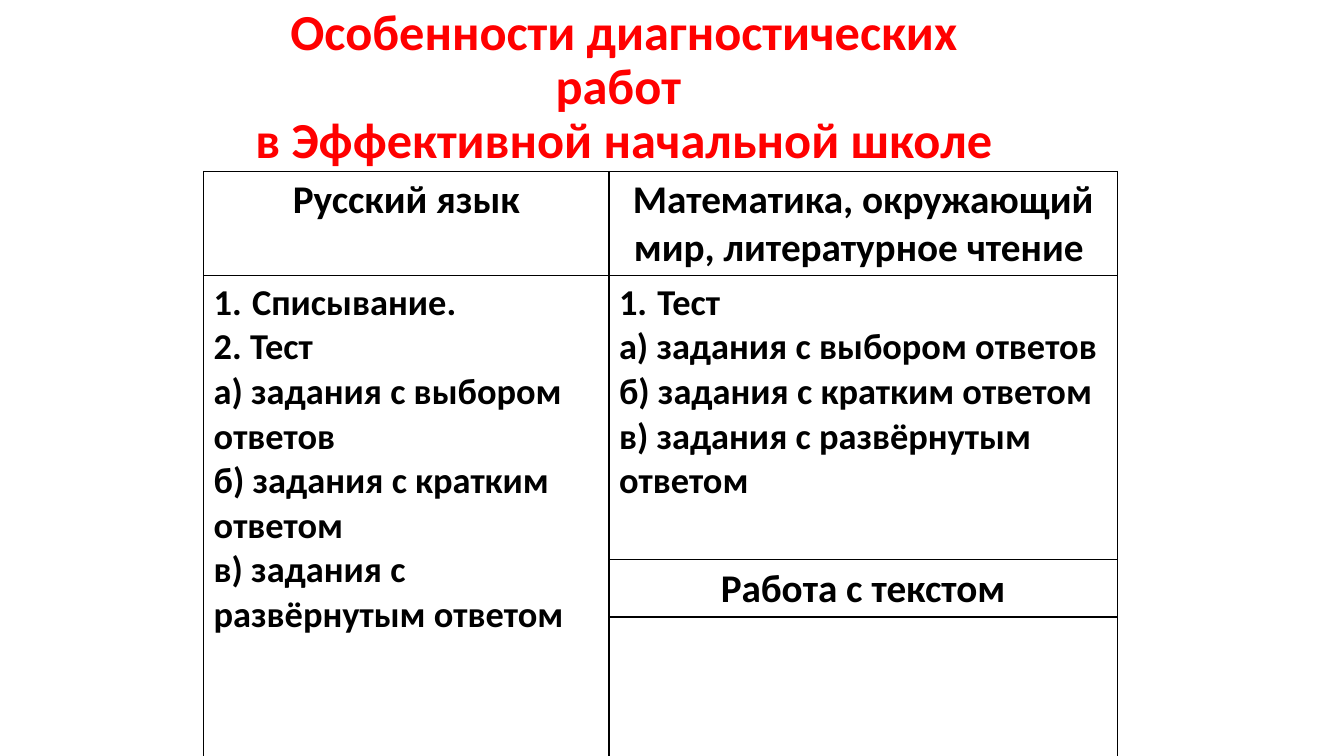
from dataclasses import dataclass

import pptx
import pptx.dml.color
import pptx.enum.text
import pptx.oxml
import pptx.oxml.ns
import pptx.presentation
import pptx.slide
import pptx.table
import pptx.text.text
import pptx.util

Align = pptx.enum.text.PP_ALIGN
NS = pptx.oxml.ns.nsdecls("a")


@dataclass(frozen=True)
class Theme:
    font: str = "Calibri"
    red: str = "FF0000"
    black: str = "000000"
    title: int = 36
    head: int = 28
    body: int = 26
    rule: float = 1


@dataclass(frozen=True)
class Entry:
    row: int
    col: int
    lines: tuple[str, ...]
    head: bool = False


THEME = Theme()
WIDTH, HEIGHT = pptx.util.Inches(13.33), pptx.util.Inches(7.5)

# Shares of the slide's width and height, in percent
TITLE_BOX = (17.18, 2, 58.51, 19.33)
TABLE_AT = (15.15, 22.67)
COLS = (30.16, 37.81)
ROWS = (6.8, 37.6, 6.8, 20.27)
INDENT = 2.85

TITLE = "Особенности диагностических работ \vв Эффективной начальной школе"
TASKS = (
    "а) задания с выбором ответов",
    "б) задания с кратким ответом",
    "в) задания с развёрнутым ответом",
)
ENTRIES = (
    Entry(0, 0, ("Русский язык",), head=True),
    Entry(0, 1, ("Математика, окружающий мир, литературное чтение ",), head=True),
    Entry(1, 0, ("Списывание.", "2. Тест", *TASKS)),
    Entry(1, 1, ("Тест", *TASKS)),
    Entry(2, 1, ("Работа с текстом",), head=True),
)


def across(share: float) -> int:
    return round(WIDTH * share / 100)


def down(share: float) -> int:
    return round(HEIGHT * share / 100)


def style(frame: pptx.text.text.TextFrame, size: int, color: str, align: Align) -> None:
    for para in frame.paragraphs:
        para.alignment = align
        for run in para.runs:
            run.font.name = THEME.font
            run.font.size = pptx.util.Pt(size)
            run.font.bold = True
            run.font.color.rgb = pptx.dml.color.RGBColor.from_string(color)


def number(para: pptx.text.text._Paragraph) -> None:
    """Give the paragraph an automatic number and a hanging indent."""
    props = para._p.get_or_add_pPr()
    props.set("marL", str(across(INDENT)))
    props.set("indent", str(-across(INDENT)))
    props.append(pptx.oxml.parse_xml(f'<a:buAutoNum {NS} type="arabicPeriod"/>'))


def frame_cell(cell: pptx.table._Cell) -> None:
    """Rule all four sides of the cell and clear its fill."""
    props = cell._tc.get_or_add_tcPr()
    for side in "LRTB":
        props.append(pptx.oxml.parse_xml(
            f'<a:ln{side} {NS} w="{pptx.util.Pt(THEME.rule)}"><a:solidFill>'
            f'<a:srgbClr val="{THEME.black}"/></a:solidFill></a:ln{side}>'))
    cell.fill.background()


def add_title(slide: pptx.slide.Slide) -> None:
    left, top, wide, high = TITLE_BOX
    box = slide.shapes.add_textbox(across(left), down(top), across(wide), down(high))
    frame = box.text_frame
    frame.word_wrap = True
    frame.vertical_anchor = pptx.enum.text.MSO_ANCHOR.MIDDLE
    frame.text = TITLE
    frame.paragraphs[0].line_spacing = 0.9
    style(frame, THEME.title, THEME.red, Align.CENTER)


def add_grid(slide: pptx.slide.Slide) -> None:
    left, top = TABLE_AT
    table = slide.shapes.add_table(
        len(ROWS), len(COLS), across(left), down(top),
        across(sum(COLS)), down(sum(ROWS))).table
    table.first_row = table.horz_banding = False
    for col, share in zip(table.columns, COLS):
        col.width = across(share)
    for row, share in zip(table.rows, ROWS):
        row.height = down(share)
    for cell in table.iter_cells():
        frame_cell(cell)
    table.cell(1, 0).merge(table.cell(len(ROWS) - 1, 0))
    for entry in ENTRIES:
        frame = table.cell(entry.row, entry.col).text_frame
        frame.text = "\n".join(entry.lines)
        if entry.head:
            style(frame, THEME.head, THEME.black, Align.CENTER)
        else:
            number(frame.paragraphs[0])
            style(frame, THEME.body, THEME.black, Align.LEFT)


def main() -> None:
    deck = pptx.Presentation()
    deck.slide_width, deck.slide_height = WIDTH, HEIGHT
    slide = deck.slides.add_slide(deck.slide_layouts[6])
    add_title(slide)
    add_grid(slide)
    deck.save("out.pptx")


if __name__ == "__main__":
    main()
